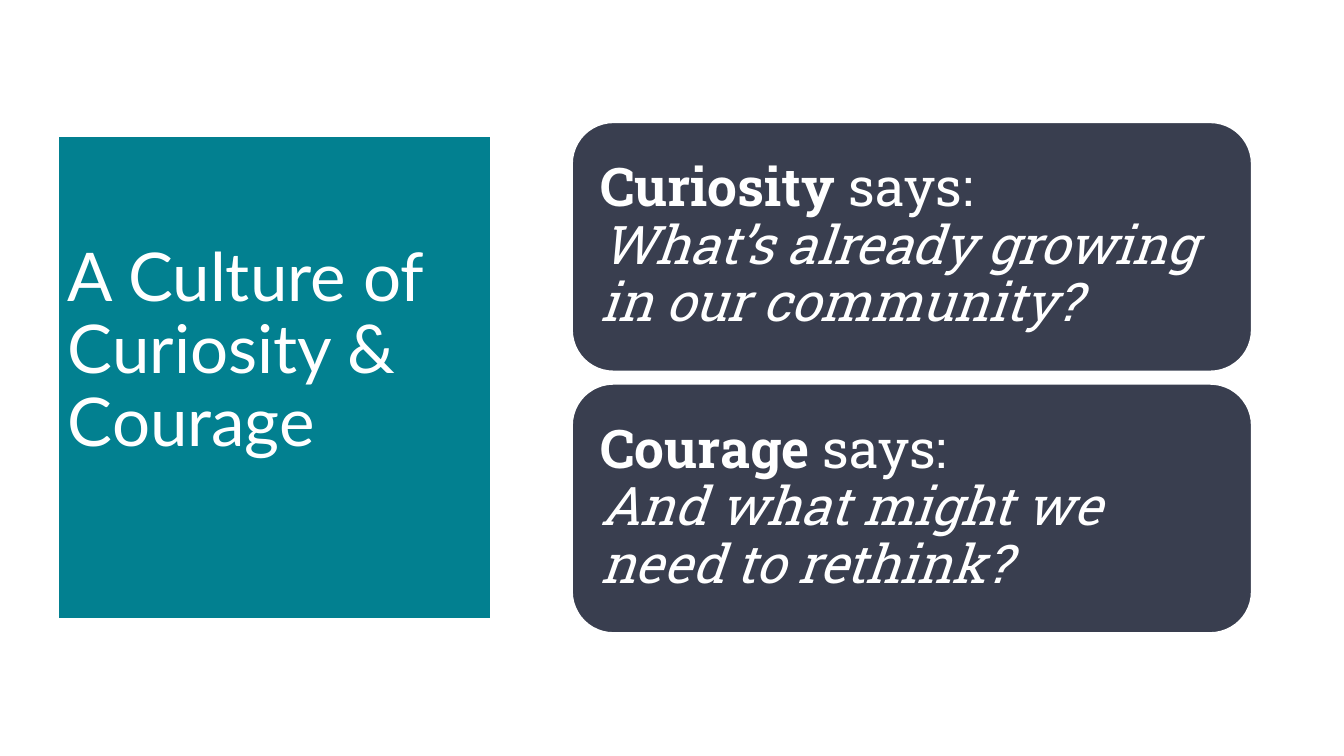
from pptx import Presentation
from pptx.dml.color import RGBColor
from pptx.enum.shapes import MSO_SHAPE as Shape
from pptx.enum.text import MSO_ANCHOR as Anchor, MSO_AUTO_SIZE as AutoSize, PP_ALIGN as Align
from pptx.util import Inches, Pt

COLORS = {"teal": "028090", "navy": "393E4F", "white": "FFFFFF"}
WIDTH, HEIGHT = 13.33, 7.5

# Layout as shares of the slide's size
TITLE_BOX = (0.043, 0.18, 0.323, 0.639)
CARD_LEFT, CARD_TOP = 0.4255, 0.1615
CARD_WIDTH, CARD_HEIGHT = 0.506, 0.33
CARD_STEP = 0.346

CARDS = [
    ("Curiosity", "What’s already growing in our community?"),
    ("Courage", "And what might we need to rethink?"),
]


class SlideBuilder:
    title_font, card_font = "Lato", "Roboto Slab"
    title_size, card_size = 48, 38

    def __init__(self, presentation):
        self.slide = presentation.slides.add_slide(presentation.slide_layouts[5])

    def color(self, name):
        return RGBColor.from_string(COLORS[name])

    def place(self, shape, left, top, width, height):
        shape.left, shape.top = Inches(left * WIDTH), Inches(top * HEIGHT)
        shape.width, shape.height = Inches(width * WIDTH), Inches(height * HEIGHT)

    def paint(self, shape, fill, line_width):
        shape.fill.solid()
        shape.fill.fore_color.rgb = self.color(fill)
        shape.line.color.rgb = self.color("white")
        shape.line.width = Pt(line_width)

    def style_text(self, frame, font_name, size, anchor):
        frame.word_wrap = True
        frame.auto_size = AutoSize.NONE
        frame.vertical_anchor = anchor
        paragraph = frame.paragraphs[0]
        paragraph.alignment = Align.LEFT
        paragraph.line_spacing = 0.9
        paragraph.font.name = font_name
        paragraph.font.size = Pt(size)
        paragraph.font.color.rgb = self.color("white")
        return paragraph

    def title(self, text, box):
        shape = self.slide.shapes.title
        self.place(shape, *box)
        self.paint(shape, "teal", 2)
        frame = shape.text_frame
        frame.text = text
        frame.margin_bottom = Inches(1.57)
        self.style_text(frame, self.title_font, self.title_size, Anchor.BOTTOM)

    def card(self, speaker, question, box):
        shape = self.slide.shapes.add_shape(Shape.ROUNDED_RECTANGLE, 0, 0, 0, 0)
        self.place(shape, *box)
        self.paint(shape, "navy", 1.5)
        shape.shadow.inherit = False
        frame = shape.text_frame
        frame.margin_left = frame.margin_right = Inches(0.16)
        frame.margin_top = frame.margin_bottom = Inches(0.16)
        paragraph = self.style_text(frame, self.card_font, self.card_size, Anchor.MIDDLE)
        for text, bold, italic in ((speaker, True, False), (" says:", False, False)):
            self.add_run(paragraph, text, bold, italic)
        paragraph.add_line_break()
        self.add_run(paragraph, question, False, True)

    def add_run(self, paragraph, text, bold, italic):
        run = paragraph.add_run()
        run.text = text
        run.font.bold, run.font.italic = bold, italic


def main():
    presentation = Presentation()
    presentation.slide_width, presentation.slide_height = Inches(WIDTH), Inches(HEIGHT)
    builder = SlideBuilder(presentation)

    # Title panel
    builder.title("A Culture of Curiosity & Courage", TITLE_BOX)

    # Stacked cards
    for row, (speaker, question) in enumerate(CARDS):
        top = CARD_TOP + row * CARD_STEP
        builder.card(speaker, question, (CARD_LEFT, top, CARD_WIDTH, CARD_HEIGHT))

    presentation.save("out.pptx")


if __name__ == "__main__":
    main()
